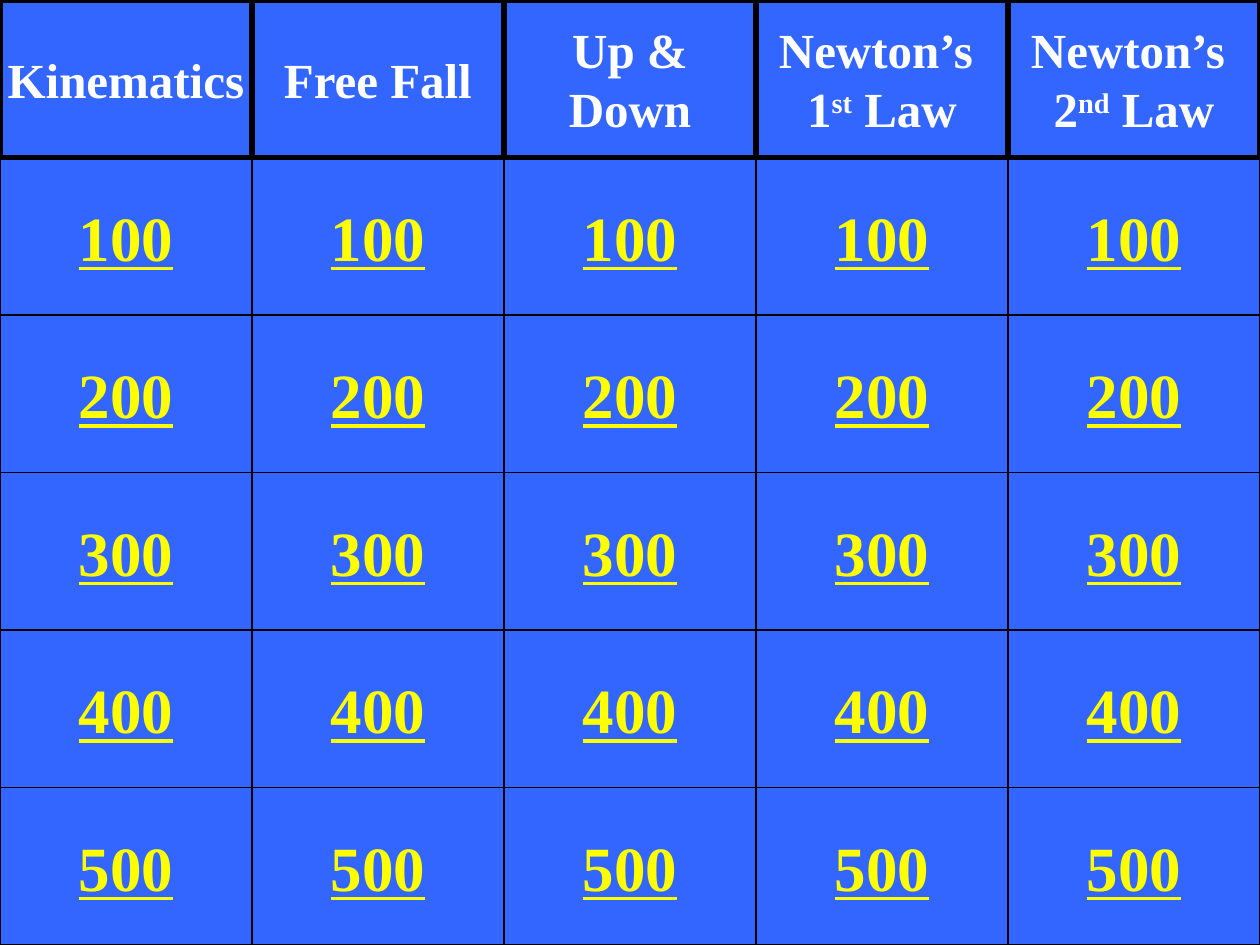
from pptx import Presentation
from pptx.dml.color import RGBColor
from pptx.enum.shapes import MSO_SHAPE
from pptx.enum.text import MSO_ANCHOR, PP_ALIGN
from pptx.util import Cm, Pt

BLUE = RGBColor(0x33, 0x66, 0xFF)
BLACK = RGBColor(0, 0, 0)
WHITE = RGBColor(0xFF, 0xFF, 0xFF)
YELLOW = RGBColor(0xFF, 0xFF, 0)

CELL_W, CELL_H = Cm(5.08), Cm(3.175)

# Each category is a list of lines, each line a list of runs
CATEGORIES = [
    [["Kinematics"]],
    [["Free Fall"]],
    [["Up &"], ["Down"]],
    [["Newton’s "], ["1", "st", " Law"]],
    [["Newton’s "], ["2", "nd", " Law"]],
]
ORDINALS = ("st", "nd")
POINTS = [100, 200, 300, 400, 500]


def add_cell(col, row, preset, line_width, lines, size, color, underline=None):
    """Add one board cell; ordinal endings in its lines are raised."""
    sp = slide.shapes.add_shape(preset, col * CELL_W, row * CELL_H, CELL_W, CELL_H)
    sp.shadow.inherit = False
    sp.fill.solid()
    sp.fill.fore_color.rgb = BLUE
    sp.line.color.rgb = BLACK
    sp.line.width = Pt(line_width)
    tf = sp.text_frame
    tf.word_wrap = False
    tf.vertical_anchor = MSO_ANCHOR.MIDDLE
    for i, runs in enumerate(lines):
        p = tf.add_paragraph() if i else tf.paragraphs[0]
        p.alignment = PP_ALIGN.CENTER
        for text in runs:
            r = p.add_run()
            r.text = text
            r.font.name = "Times New Roman"
            r.font.size = Pt(size)
            r.font.bold = True
            r.font.underline = underline
            r.font.color.rgb = color
            if text in ORDINALS:
                r._r.get_or_add_rPr().set("baseline", "30000")


prs = Presentation()
prs.slide_width = Cm(25.4)
prs.slide_height = Cm(19.05)
slide = prs.slides.add_slide(prs.slide_layouts[6])
slide.background.fill.solid()
slide.background.fill.fore_color.rgb = BLUE

# Point buttons
for col in range(len(CATEGORIES)):
    for row, points in enumerate(POINTS, start=1):
        add_cell(col, row, MSO_SHAPE.ACTION_BUTTON_CUSTOM, 0.75,
                 [[str(points)]], 36, YELLOW, underline=True)

# Category headers, in front of the buttons
for col, lines in enumerate(CATEGORIES):
    add_cell(col, 0, MSO_SHAPE.RECTANGLE, 3, lines, 28, WHITE)

prs.save("out.pptx")
